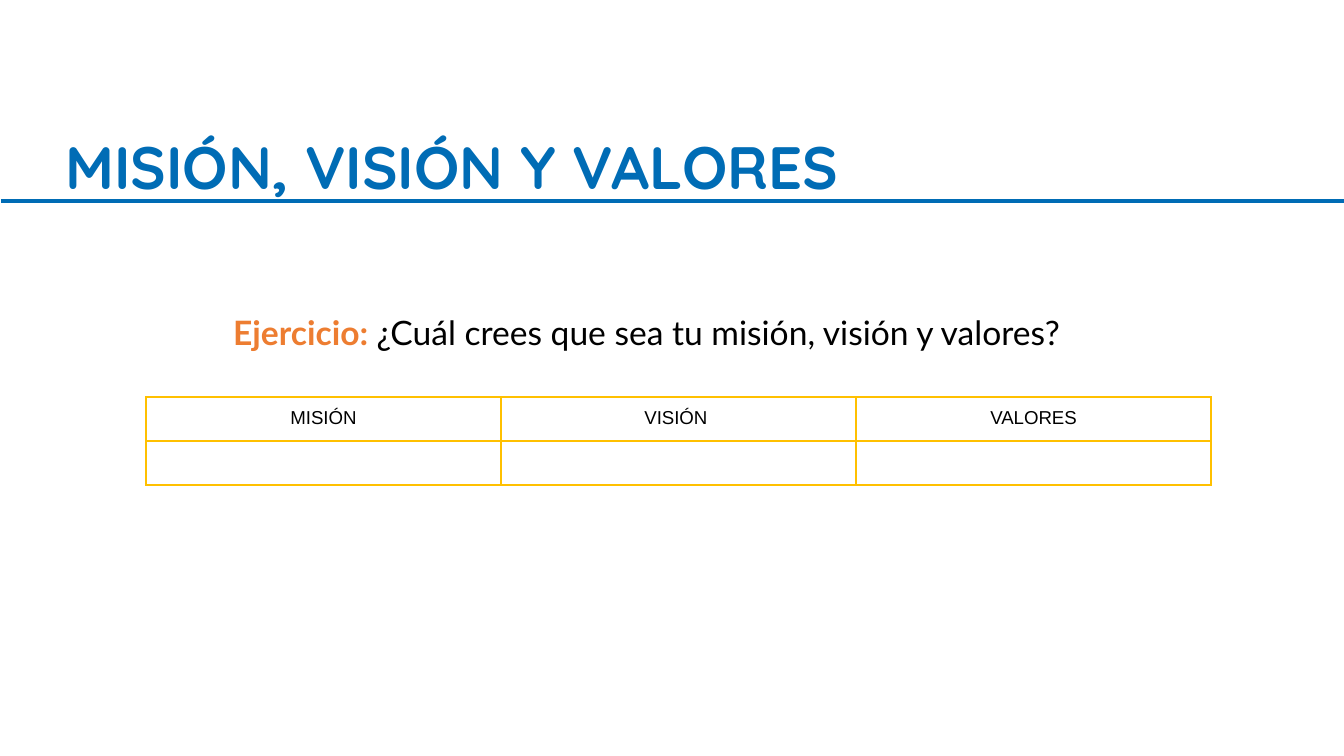
from dataclasses import dataclass

from lxml.etree import SubElement
from pptx import Presentation
from pptx.dml.color import RGBColor as RGB
from pptx.enum.shapes import MSO_CONNECTOR as CONN
from pptx.enum.text import MSO_ANCHOR as ANCHOR, MSO_AUTO_SIZE as AUTO, PP_ALIGN as ALIGN
from pptx.oxml.ns import qn
from pptx.util import Emu, Pt


@dataclass(frozen=True)
class Theme:
    blue: str = "006CB5"
    orange: str = "ED7D31"
    black: str = "000000"
    gold: str = "FFC000"
    title_size: int = 32
    body_size: int = 18
    cell_size: int = 10


theme = Theme()
SCALE = 914400 / 134.4  # EMU per px


def px(n):
    return Emu(round(n * SCALE))


def add_text(p, text, *, size, font, color, bold=False, align=ALIGN.LEFT):
    p.alignment = align
    r = p.add_run()
    r.text = text
    r.font.size, r.font.name, r.font.bold = Pt(size), font, bold
    r.font.color.rgb = RGB.from_string(color)


prs = Presentation()
prs.slide_width, prs.slide_height = px(1344), px(756)
s = prs.slides.add_slide(prs.slide_layouts[5])

# Title
title = s.shapes.title
title.left, title.top, title.width, title.height = px(52), px(98), px(1266), px(145)
tf = title.text_frame
tf.word_wrap, tf.auto_size, tf.vertical_anchor = True, AUTO.NONE, ANCHOR.MIDDLE
p = tf.paragraphs[0]
p.line_spacing = 0.9
add_text(p, "MISIÓN, VISIÓN Y VALORES", size=theme.title_size,
         font="Quicksand", color=theme.blue, bold=True)

# Rule under the title
rule = s.shapes.add_connector(CONN.STRAIGHT, px(1), px(201), px(1345), px(201))
rule.line.color.rgb = RGB.from_string(theme.blue)
rule.line.width = Pt(2)
SubElement(rule._element.spPr, qn("a:effectLst"))

# Exercise question
tf = s.shapes.add_textbox(px(220), px(305), px(917), px(54)).text_frame
tf.word_wrap, tf.auto_size = True, AUTO.SHAPE_TO_FIT_TEXT
p = tf.paragraphs[0]
add_text(p, "Ejercicio: ", size=theme.body_size, font="Lato", color=theme.orange, bold=True)
add_text(p, "¿Cuál crees que sea tu misión, visión y valores?",
         size=theme.body_size, font="Lato", color=theme.black)

# Answer table: a heading row and an empty row to fill in
headings = ["MISIÓN", "VISIÓN ", "VALORES"]
table = s.shapes.add_table(2, len(headings), px(146), px(397), px(1065), px(86)).table
table.first_row = table.horz_banding = False
for row in table.rows:
    row.height = px(43)

for i, cell in enumerate(table.iter_cells()):
    cell.margin_left = cell.margin_right = Pt(7.2)
    cell.margin_top = cell.margin_bottom = Pt(5.76)
    tcPr = cell._tc.get_or_add_tcPr()
    for side in ("lnL", "lnR", "lnT", "lnB"):
        ln = SubElement(tcPr, qn(f"a:{side}"), w=str(Pt(1)))
        SubElement(SubElement(ln, qn("a:solidFill")), qn("a:srgbClr"), val=theme.gold)
    cell.fill.background()
    p = cell.text_frame.paragraphs[0]
    if i < len(headings):
        add_text(p, headings[i], size=theme.cell_size, font="Arial",
                 color=theme.black, align=ALIGN.CENTER)
    else:
        SubElement(p._p, qn("a:endParaRPr"), sz=str(theme.cell_size * 100))

prs.save("out.pptx")
